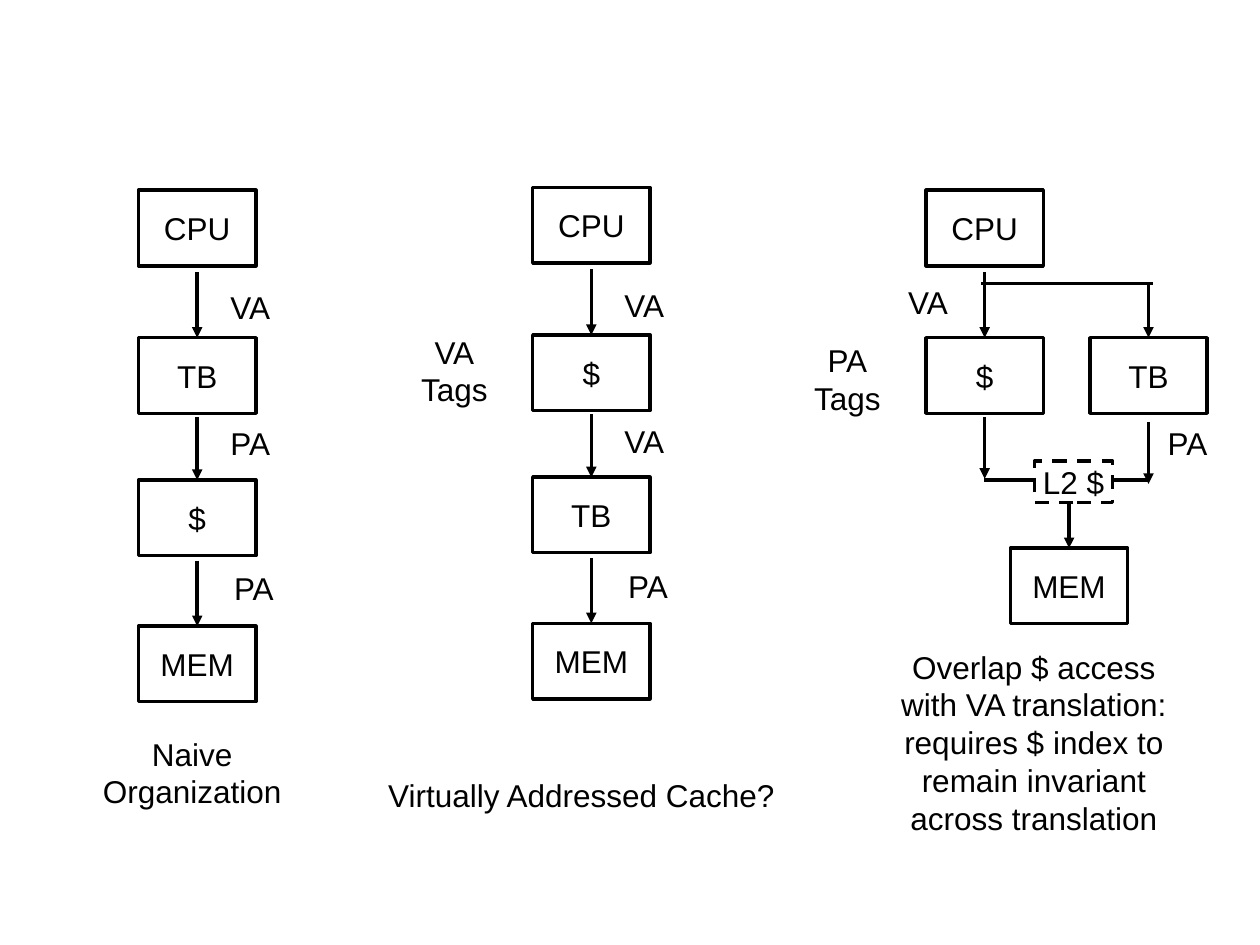
import dataclasses

import pptx
import pptx.dml.color
import pptx.enum.dml
import pptx.enum.shapes
import pptx.enum.text
import pptx.oxml
import pptx.oxml.ns
import pptx.util

Pt = pptx.util.Pt
ALIGN = pptx.enum.text.PP_ALIGN
ANCHOR = pptx.enum.text.MSO_ANCHOR


@dataclasses.dataclass(frozen=True)
class Theme:
    ink: str = "000000"
    paper: str = "FFFFFF"
    font: str = "Arial"
    size: float = 18
    stroke: float = 2


THEME = Theme()
BOX_WIDTH, BOX_HEIGHT = 67, 43.2


def rgb(value):
    return pptx.dml.color.RGBColor.from_string(value)


def write(shape, text, align=ALIGN.CENTER, anchor=ANCHOR.TOP, fit=False):
    frame = shape.text_frame
    frame.word_wrap = False
    frame.vertical_anchor = anchor
    if fit:
        frame.auto_size = pptx.enum.text.MSO_AUTO_SIZE.SHAPE_TO_FIT_TEXT
    for index, line in enumerate(text.split("\n")):
        paragraph = frame.paragraphs[0] if index == 0 else frame.add_paragraph()
        paragraph.alignment = align
        run = paragraph.add_run()
        run.text = line
        run.font.name = THEME.font
        run.font.size = Pt(THEME.size)
        run.font.color.rgb = rgb(THEME.ink)


class Diagram:
    def __init__(self, slide, theme):
        self.slide = slide
        self.theme = theme
        self.shapes = slide.shapes

    def start_group(self):
        self.shapes = self.slide.shapes.add_group_shape().shapes

    def end_group(self):
        self.shapes = self.slide.shapes

    def box(self, text, x, y, width=BOX_WIDTH, height=BOX_HEIGHT, dashed=False):
        box = self.shapes.add_shape(
            pptx.enum.shapes.MSO_SHAPE.RECTANGLE, Pt(x), Pt(y), Pt(width), Pt(height))
        box.shadow.inherit = False
        box.fill.solid()
        box.fill.fore_color.rgb = rgb(self.theme.paper)
        box.line.color.rgb = rgb(self.theme.ink)
        box.line.width = Pt(self.theme.stroke)
        if dashed:
            box.line.dash_style = pptx.enum.dml.MSO_LINE.DASH
        write(box, text, anchor=ANCHOR.MIDDLE)
        return box

    def label(self, text, x, y, width=38.2, height=29, align=ALIGN.LEFT):
        label = self.shapes.add_textbox(Pt(x), Pt(y), Pt(width), Pt(height))
        write(label, text, align=align, fit=True)
        return label

    def line(self, x1, y1, x2, y2, arrow=False):
        line = self.shapes.add_connector(
            pptx.enum.shapes.MSO_CONNECTOR.STRAIGHT, Pt(x1), Pt(y1), Pt(x2), Pt(y2))
        line.line.color.rgb = rgb(self.theme.ink)
        line.line.width = Pt(self.theme.stroke)
        if arrow:
            head = pptx.oxml.parse_xml(
                f'<a:tailEnd {pptx.oxml.ns.nsdecls("a")} type="triangle"/>')
            line.line._get_or_add_ln().append(head)
        line._element.spPr.append(
            pptx.oxml.parse_xml(f'<a:effectLst {pptx.oxml.ns.nsdecls("a")}/>'))
        return line

    def arrow_into(self, target, x, y):
        arrow = self.line(x, y, x, target.top.pt, arrow=True)
        arrow.end_connect(target, 0)

    def chain(self, x, y, stages, addresses):
        tops = (0, 84.3, 165.6, 249.1)
        boxes = [self.box(stage, x, y + top) for stage, top in zip(stages, tops)]
        for target, start in zip(boxes[1:], (46.8, 129.6, 211.7)):
            self.arrow_into(target, x + BOX_WIDTH / 2, y + start)
        label_places = ((45.4, 52.6), (45.4, 130.3), (47.5, 213.1))
        for address, (dx, dy) in zip(addresses, label_places):
            self.label(address, x + dx, y + dy)


def main():
    deck = pptx.Presentation()
    deck.slide_width, deck.slide_height = Pt(720), Pt(540)
    diagram = Diagram(deck.slides.add_slide(deck.slide_layouts[6]), THEME)

    diagram.chain(79.2, 108.7, ("CPU", "TB", "$", "MEM"), ("VA", "PA", "PA"))
    diagram.label("Naive\nOrganization", 51.1, 416.2, 117.4, 50.4, ALIGN.CENTER)
    diagram.label("Virtually Addressed Cache?", 213.8, 439.9, 236.9, 29, ALIGN.CENTER)

    cache_x, lookaside_x, top, middle = 529.2, 622.8, 108.7, 193
    diagram.box("CPU", cache_x, top)
    cache = diagram.box("$", cache_x, middle)
    lookaside = diagram.box("TB", lookaside_x, middle)
    memory = diagram.box("MEM", 577.4, 313.2)
    cache_center = cache_x + BOX_WIDTH / 2
    lookaside_center = lookaside_x + BOX_WIDTH / 2
    memory_center = 577.4 + BOX_WIDTH / 2

    diagram.arrow_into(cache, cache_center, 155.5)
    diagram.arrow_into(lookaside, lookaside_center, 161.3)
    diagram.arrow_into(memory, memory_center, 275.8)
    diagram.line(cache_center, 238.3, cache_center, 273.6, arrow=True)
    diagram.line(lookaside_center, 241.2, lookaside_center, 276.5, arrow=True)
    diagram.line(658.8, 162, 560.6, 162)
    diagram.line(562.3, 274.3, 656.6, 274.3)
    diagram.label("VA", 511.9, 158.4)
    diagram.label("PA", 660.2, 239)
    diagram.label("PA\nTags", 457.2, 191.5, 54, 50.4, ALIGN.CENTER)
    diagram.label(
        "Overlap $ access\nwith VA translation:\nrequires $ index to\n"
        "remain invariant\nacross translation",
        506.9, 366.5, 167.8, 115.9, ALIGN.CENTER)

    diagram.start_group()
    diagram.chain(304.4, 107.1, ("CPU", "$", "TB", "MEM"), ("VA", "VA", "PA"))
    diagram.label("VA\nTags", 232.6, 186.5, 54, 50.4, ALIGN.CENTER)
    diagram.end_group()

    diagram.box("L2 $", 591.1, 263.5, 44.6, 23.8, dashed=True)

    deck.save("out.pptx")


if __name__ == "__main__":
    main()
